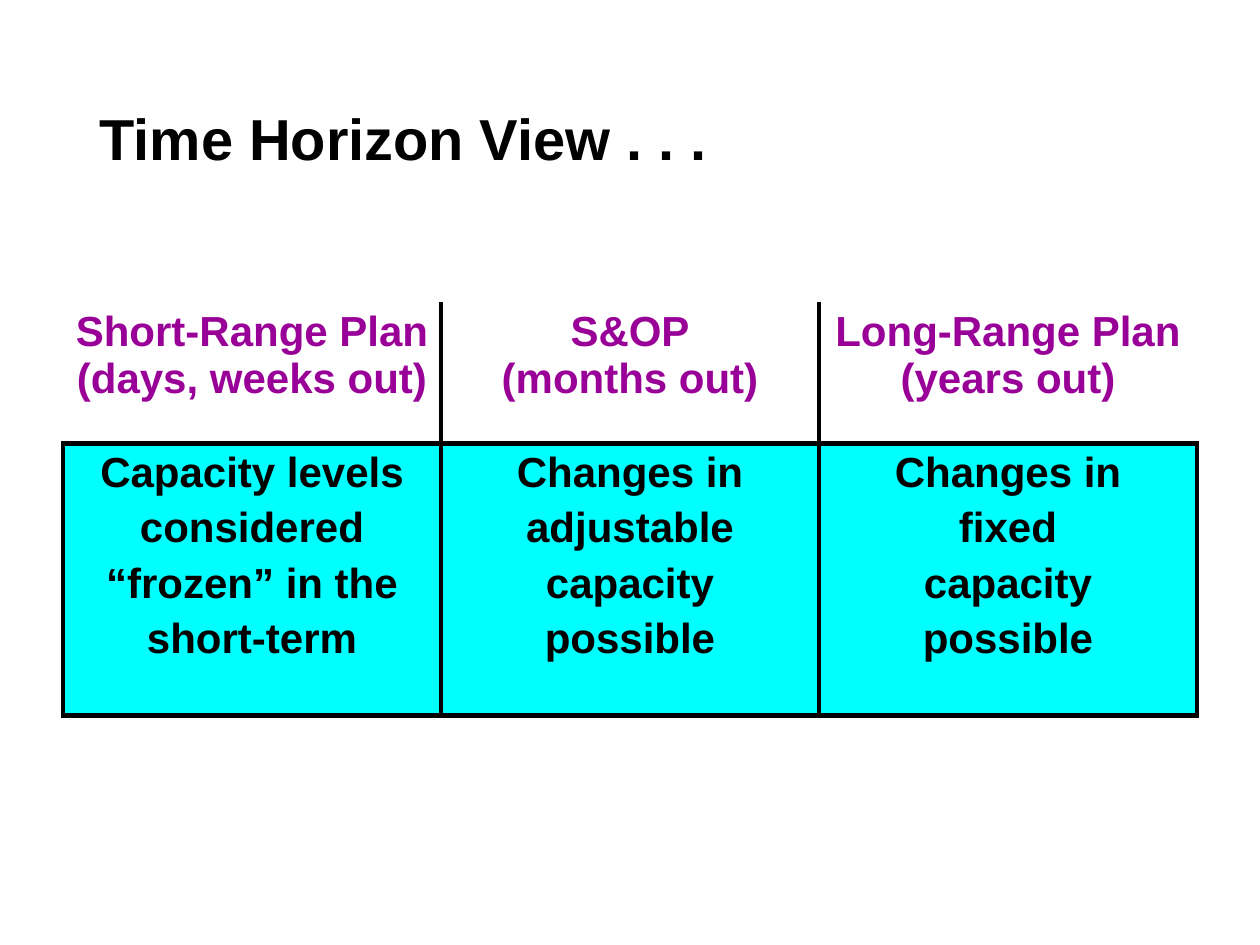
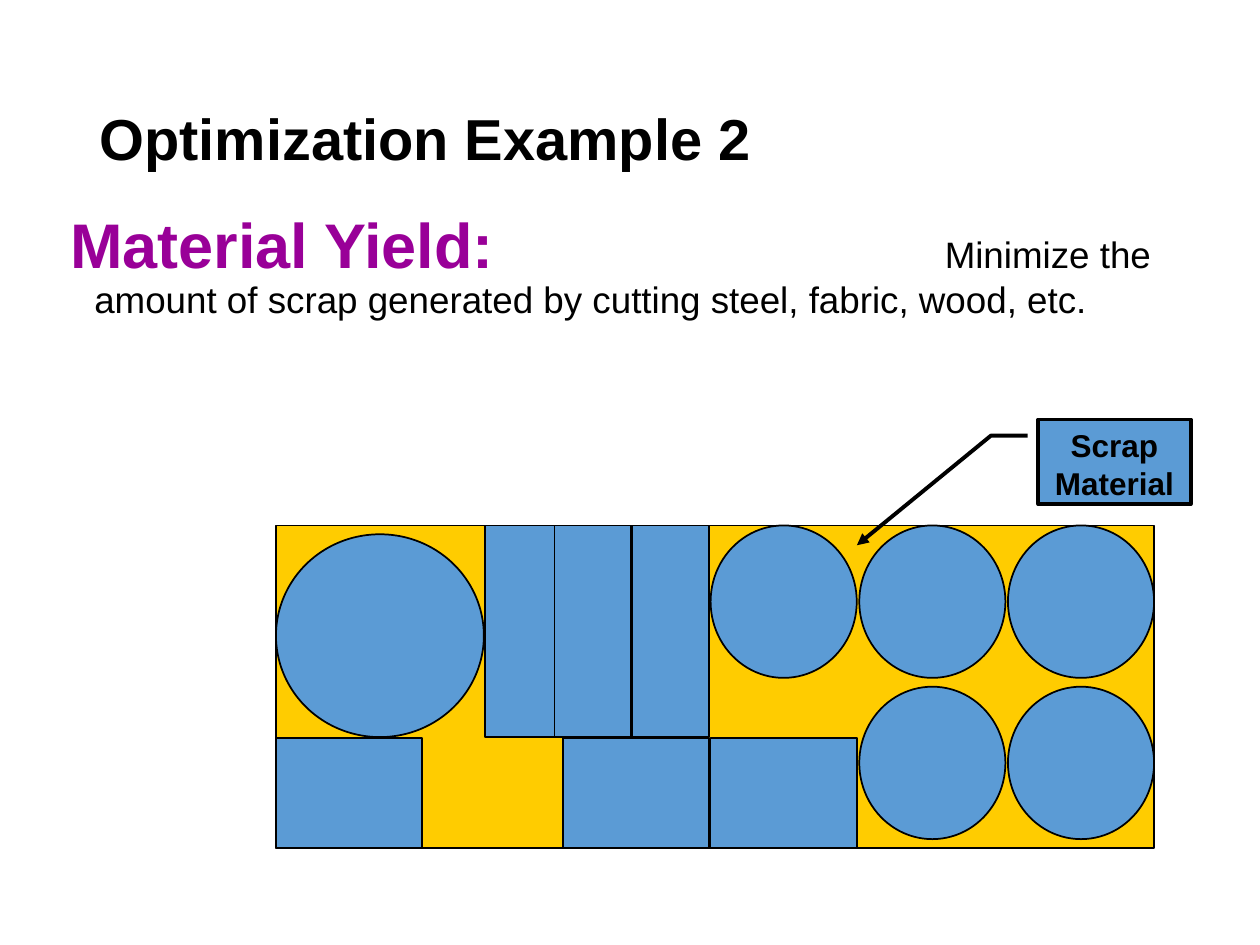
from lxml import etree
from pptx import Presentation
from pptx.dml.color import RGBColor
from pptx.enum.shapes import MSO_SHAPE as Shape
from pptx.enum.text import MSO_ANCHOR as Anchor, MSO_AUTO_SIZE as AutoSize, PP_ALIGN as Align
from pptx.oxml import parse_xml
from pptx.oxml.ns import nsdecls, qn
from pptx.util import Inches, Pt

BLACK = RGBColor(0x00, 0x00, 0x00)
PURPLE = RGBColor(0x99, 0x00, 0x98)
CYAN = RGBColor(0x00, 0xFF, 0xFF)
BLUE = RGBColor(0x5B, 0x9B, 0xD5)
GOLD = RGBColor(0xFF, 0xCC, 0x00)
FONT = "Arial"

HORIZONS = [
    ("Short-Range Plan\v(days, weeks out)",
     ["Capacity levels", "considered", "“frozen” in the", "short-term"]),
    ("S&OP\v(months out)",
     ["Changes in", "adjustable", "capacity", "possible"]),
    ("Long-Range Plan\v(years out)",
     ["Changes in", "fixed", "capacity", "possible"]),
]
HEADER_HEIGHT, EFFECT_HEIGHT, HORIZON_WIDTH = 1.12, 2.16, 3

YIELD_TERM = "Material Yield:"
YIELD_GOAL = ["Minimize the",
              "amount of scrap generated by cutting steel, fabric, wood, etc."]
GOAL_TABS = [0.19, 6.94]

SHEET = (2.19, 4.17, 6.97, 2.56)
SHEET_LEFT, SHEET_TOP = SHEET[:2]
LOWER_TOP = 5.86
DISC_LEFT, DISC_PITCH_X, DISC_PITCH_Y = 5.64, 1.18, 1.28
DISC_SLOTS = [(1, 1), (2, 1), (0, 0), (1, 0), (2, 0)]
STRIP_LEFTS = [3.85, 4.4, 5.02]
BLOCK_LEFTS = [SHEET_LEFT, 4.47, DISC_LEFT]


def write(frame, paragraphs, size, color=BLACK, bold=True, align=Align.LEFT,
          gap=0, spacing=None):
    """Fill a text frame; gap is the space in points between paragraphs."""
    frame.text = "\n".join(paragraphs)
    for number, paragraph in enumerate(frame.paragraphs):
        paragraph.alignment = align
        paragraph.space_before = Pt(gap if number else 0)
        if spacing:
            paragraph.line_spacing = spacing
        for run in paragraph.runs:
            style(run, size, color, bold)


def style(run, size, color, bold):
    run.font.name, run.font.size, run.font.bold = FONT, Pt(size), bold
    run.font.color.rgb = color


def add_titled_slide(deck, text):
    slide = deck.slides.add_slide(deck.slide_layouts[5])
    title = slide.shapes.title
    title.left, title.top, title.width, title.height = map(Inches, (0.69, 0.4, 7.55, 1.45))
    write(title.text_frame, [text], 33, spacing=0.9)
    title.text_frame.auto_size = AutoSize.NONE
    title.text_frame.vertical_anchor = Anchor.MIDDLE
    return slide


def set_borders(cell, shown):
    """Draw the sides named in shown (from L, R, T, B) and hide the others."""
    properties = cell._tc.get_or_add_tcPr()
    for side in "LRTB":
        paint = f'<a:solidFill><a:srgbClr val="{BLACK}"/></a:solidFill>' if side in shown else "<a:noFill/>"
        properties.append(parse_xml(
            f'<a:ln{side} {nsdecls("a")} w="{Pt(3)}">{paint}</a:ln{side}>'))


def add_shape(shapes, kind, box, fill, line_width=1):
    shape = shapes.add_shape(kind, *map(Inches, box))
    shape.shadow.inherit = False
    shape.fill.solid()
    shape.fill.fore_color.rgb = fill
    shape.line.color.rgb = BLACK
    shape.line.width = Pt(line_width)
    return shape


def build_time_horizons(deck):
    slide = add_titled_slide(deck, "Time Horizon View . . .")
    count = len(HORIZONS)
    table = slide.shapes.add_table(
        2, count, Inches(0.5), Inches(2.4), Inches(HORIZON_WIDTH * count),
        Inches(HEADER_HEIGHT + EFFECT_HEIGHT)).table
    table.first_row = table.horz_banding = False
    table.rows[0].height = Inches(HEADER_HEIGHT)
    table.rows[1].height = Inches(EFFECT_HEIGHT)
    for col, (plan, effect) in enumerate(HORIZONS):
        header, body = table.cell(0, col), table.cell(1, col)
        write(header.text_frame, [plan], 24, color=PURPLE, align=Align.CENTER)
        write(body.text_frame, effect, 24, align=Align.CENTER, gap=4.8)
        set_borders(header, "B" + "L" * (col > 0) + "R" * (col < count - 1))
        set_borders(body, "LRTB")
        header.fill.background()
        body.fill.solid()
        body.fill.fore_color.rgb = CYAN


def add_yield_text(slide):
    """Write the term and its goal, each goal line starting at a tab stop."""
    frame = slide.shapes.add_textbox(*map(Inches, (0.46, 1.65, 9, 2.48))).text_frame
    frame.word_wrap = True
    paragraph = frame.paragraphs[0]
    tabs = etree.SubElement(paragraph._p.get_or_add_pPr(), qn("a:tabLst"))
    for stop in GOAL_TABS:
        etree.SubElement(tabs, qn("a:tab"), pos=str(Inches(stop)), algn="l")
    paragraph.line_spacing = 0.9
    paragraph.text = YIELD_TERM + "\v".join("\t" + line for line in YIELD_GOAL)
    term, *goal = split_first_run(paragraph, YIELD_TERM)
    style(term, 36, PURPLE, True)
    for run in goal:
        style(run, 21, BLACK, False)


def split_first_run(paragraph, head):
    """Cut head off the first run into a run of its own; return all runs."""
    first = paragraph.runs[0]
    rest = first.text[len(head):]
    first.text = head
    tail = paragraph.add_run()
    tail.text = rest
    first._r.addnext(tail._r)
    return paragraph.runs


def add_cutting_plan(slide):
    parts = slide.shapes.add_group_shape().shapes
    add_shape(parts, Shape.RECTANGLE, SHEET, GOLD)
    add_shape(parts, Shape.OVAL, (SHEET_LEFT, 4.24, 1.65, 1.61), BLUE)
    for col, row in DISC_SLOTS:
        add_shape(parts, Shape.OVAL, (DISC_LEFT + col * DISC_PITCH_X,
                                      SHEET_TOP + row * DISC_PITCH_Y, 1.16, 1.21), BLUE)
    for left in STRIP_LEFTS:
        add_shape(parts, Shape.RECTANGLE, (left, SHEET_TOP, 0.61, 1.68), BLUE)
    for left in BLOCK_LEFTS:
        add_shape(parts, Shape.RECTANGLE, (left, LOWER_TOP, 1.16, 0.87), BLUE)


def add_scrap_callout(slide):
    callout = add_shape(slide.shapes, Shape.LINE_CALLOUT_2, (8.24, 3.33, 1.21, 0.67), BLUE, 2.25)
    for number, value in enumerate([0.19, -0.07, 0.19, -0.31, 1.49, -1.19]):
        callout.adjustments[number] = value
    etree.SubElement(callout.line._get_or_add_ln(), qn("a:tailEnd"), type="triangle")
    write(callout.text_frame, ["Scrap\vMaterial"], 18, align=Align.CENTER)
    callout.text_frame.vertical_anchor = Anchor.TOP


def build_material_yield(deck):
    slide = add_titled_slide(deck, "Optimization Example 2")
    add_yield_text(slide)
    add_cutting_plan(slide)
    add_scrap_callout(slide)


def main():
    deck = Presentation()
    deck.slide_width, deck.slide_height = Inches(10), Inches(7.5)
    build_time_horizons(deck)
    build_material_yield(deck)
    deck.save("out.pptx")


if __name__ == "__main__":
    main()
